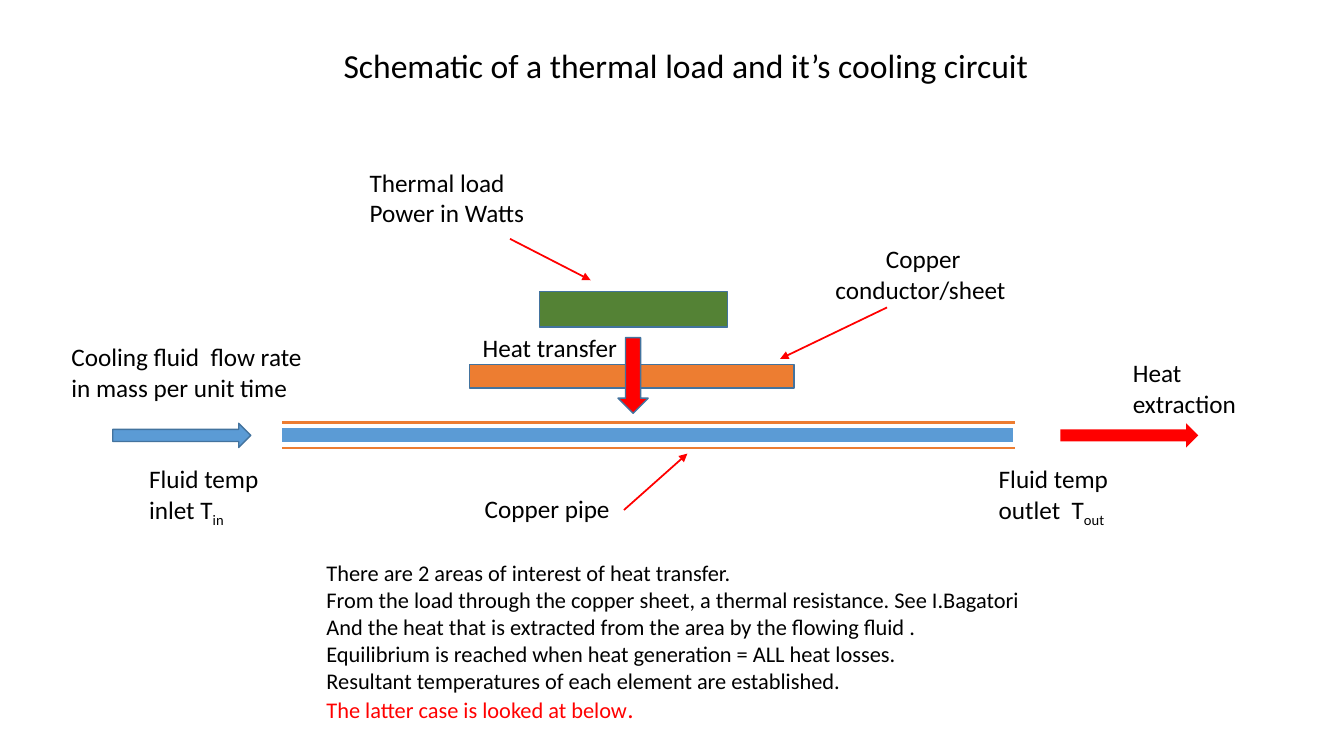
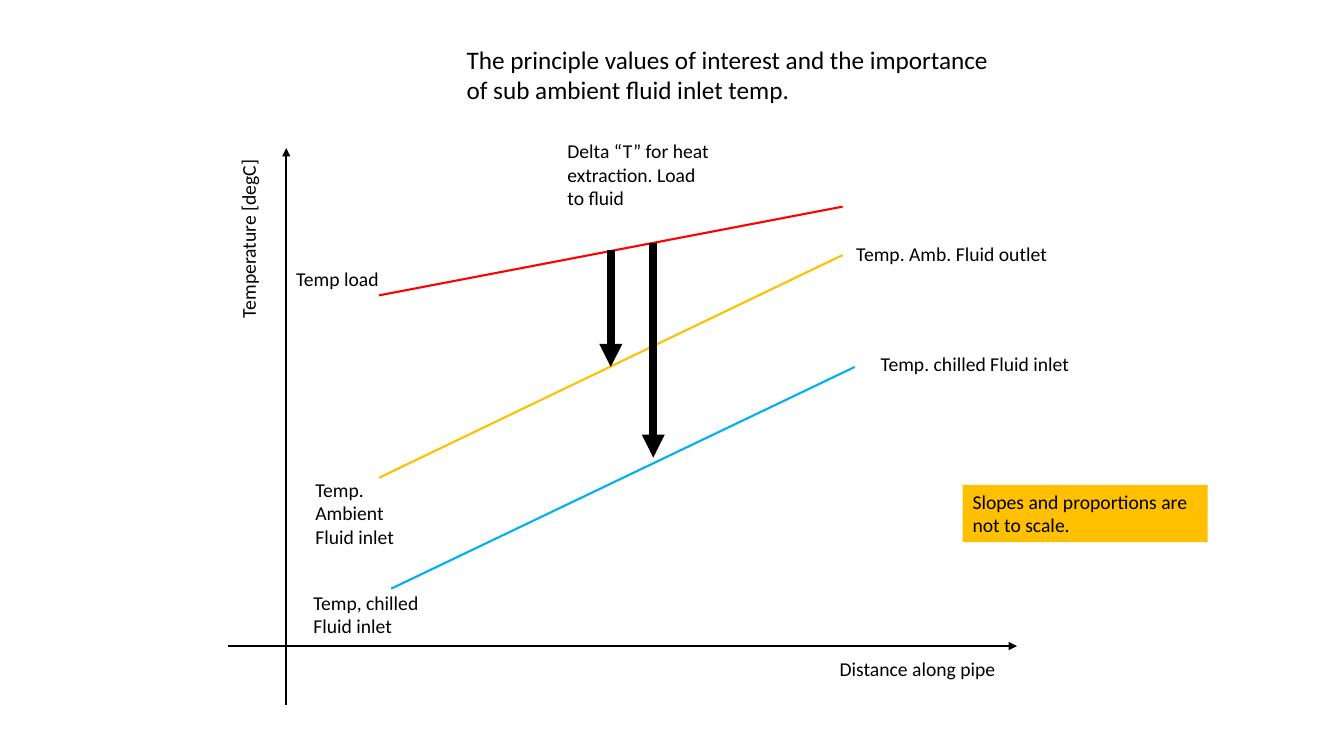
from lxml.etree import SubElement
from pptx import Presentation
from pptx.dml.color import RGBColor
from pptx.enum.shapes import MSO_CONNECTOR, MSO_SHAPE
from pptx.oxml.ns import qn
from pptx.util import Pt

FONT = "Calibri"
BLACK = RGBColor(0x00, 0x00, 0x00)
RED = RGBColor(0xFF, 0x00, 0x00)
AMBER = RGBColor(0xFF, 0xC0, 0x00)
SKY = RGBColor(0x00, 0xB0, 0xF0)
BLUE = RGBColor(0x5B, 0x9B, 0xD5)
COPPER = RGBColor(0xED, 0x7D, 0x31)
GREEN = RGBColor(0x54, 0x82, 0x35)
OUTLINE = RGBColor(0x43, 0x73, 0x9E)


def add_label(page, text, left, top, width, height, size):
    box = page.shapes.add_textbox(Pt(left), Pt(top), Pt(width), Pt(height))
    box.text_frame.word_wrap = True
    box.text_frame.text = text
    for para in box.text_frame.paragraphs:
        para.font.name = FONT
        for span in para.runs:
            span.font.name = FONT
            span.font.size = Pt(size)
            span.font.color.rgb = BLACK
    return box


def add_line(page, start, end, color, width, arrow=False):
    line = page.shapes.add_connector(
        MSO_CONNECTOR.STRAIGHT, *[Pt(value) for value in start + end])
    line.line.color.rgb = color
    line.line.width = Pt(width)
    if arrow:
        SubElement(line.line._get_or_add_ln(), qn("a:tailEnd"), type="triangle")
    SubElement(line._element.spPr, qn("a:effectLst"))


deck = Presentation()
deck.slide_width, deck.slide_height = Pt(960), Pt(540)
blank = deck.slide_layouts[6]

# Slide 1: cooling circuit schematic
page = deck.slides.add_slide(blank)
add_label(page, "Schematic of a thermal load and it’s cooling circuit",
          238.3, 28.8, 530, 36, 24)

# Pipe: fluid between two copper walls
PIPE_LEFT, PIPE_MIDDLE, WALL_GAP = 201.6, 311, 9
add_line(page, (PIPE_LEFT, PIPE_MIDDLE), (723.6, PIPE_MIDDLE), BLUE, 10)
for wall in (PIPE_MIDDLE - WALL_GAP, PIPE_MIDDLE + WALL_GAP):
    add_line(page, (PIPE_LEFT, wall), (725, wall), COPPER, 2)

# Copper sheet, load and block arrows
for kind, left, top, width, height, fill, outlined in (
    (MSO_SHAPE.RECTANGLE, 335.5, 260.6, 231.8, 16.6, COPPER, True),
    (MSO_SHAPE.RECTANGLE, 385.2, 208.4, 134.6, 25.2, GREEN, True),
    (MSO_SHAPE.DOWN_ARROW, 441.4, 241.2, 21.6, 54, RED, True),
    (MSO_SHAPE.RIGHT_ARROW, 80.6, 302.4, 98.6, 17.3, BLUE, True),
    (MSO_SHAPE.RIGHT_ARROW, 757.4, 302.4, 98.6, 17.3, RED, False),
):
    shape = page.shapes.add_shape(kind, Pt(left), Pt(top), Pt(width), Pt(height))
    shape.shadow.inherit = False
    shape.fill.solid()
    shape.fill.fore_color.rgb = fill
    if outlined:
        shape.line.color.rgb = OUTLINE
        shape.line.width = Pt(1)
    else:
        shape.line.fill.background()

# Part labels
for text, left, top, width, height in (
    ("Thermal load\nPower in Watts", 257, 115.9, 144.7, 51),
    ("Cooling fluid  flow rate\nin mass per unit time", 43.9, 240.5, 193.7, 51),
    ("Copper pipe", 339.1, 348.5, 144.7, 29),
    ("Heat transfer", 337.7, 234, 114.5, 29),
    ("Heat extraction", 802.1, 252, 106.6, 51),
):
    add_label(page, text, left, top, width, height, 18)

sheet_label = add_label(page, "Copper conductor/sheet", 589.7, 170.6, 144.7, 51, 18)
sheet_label.text_frame.paragraphs[0]._p.get_or_add_pPr().set("indent", str(Pt(36)))

# Fluid temperatures with subscripts
for text, subscript, left in (("Fluid temp inlet T", "in", 99.4),
                              ("Fluid temp outlet  T", "out", 706.3)):
    box = add_label(page, text, left, 327.6, 100.8, 51, 18)
    span = box.text_frame.paragraphs[0].add_run()
    span.text = subscript
    span.font.name = FONT
    span.font.size = Pt(18)
    span.font.color.rgb = BLACK
    span.font._element.set("baseline", "-25000")

# Pointers from labels to parts
for start, end in (((364.3, 170.6), (421.9, 200.2)),
                   ((445.7, 364.3), (491, 324)),
                   ((633.6, 219.6), (557.3, 256.3))):
    add_line(page, start, end, RED, 1.25, arrow=True)

# Explanation
notes = add_label(page, "\n".join((
    "There are 2 areas of interest of heat transfer.",
    "From the load through the copper sheet, a thermal resistance. See I.Bagatori",
    "And the heat that is extracted from the area by the flowing fluid .",
    "Equilibrium is reached when heat generation = ALL heat losses.",
    "Resultant temperatures of each element are established.",
    "The latter case is looked at below",
)), 226.1, 396, 555.8, 126, 16)
para = notes.text_frame.paragraphs[-1]
period = para.add_run()
period.text = "."
period.font.name = FONT
period.font.size = Pt(18)
for span in para.runs:
    span.font.color.rgb = RED

# Slide 2: temperatures along the pipe
page = deck.slides.add_slide(blank)
add_label(page, "The principle values of interest and the importance "
          "of sub ambient fluid inlet temp.", 326.2, 28.1, 387.4, 51, 18)

# Axes
add_line(page, (204.5, 503.3), (204.5, 105.8), BLACK, 1.5, arrow=True)
add_line(page, (162.7, 461.5), (726.5, 461.5), BLACK, 1.5, arrow=True)

# Temperature lines
RUN = 331.2
for left, start, end, color in ((270.7, 341.3, 182.2, AMBER),
                                (279.4, 420.5, 262.1, SKY),
                                (270.7, 211, 147.6, RED)):
    add_line(page, (left, start), (left + RUN, end), color, 1.5)

# Temperature differences
for across, top, bottom in ((466.6, 173.5, 326.9), (436.3, 178.6, 262.1)):
    add_line(page, (across, top), (across, bottom), BLACK, 5.5, arrow=True)

# Line and axis labels
for text, left, top, width, height in (
    ("Temp. Ambient Fluid inlet", 218.2, 337.7, 72.7, 58.3),
    ("Temp load", 204.5, 187.2, 84.2, 24.5),
    ("Temp, chilled Fluid inlet", 216.7, 418.3, 93.6, 41),
    ("Distance along pipe", 592.6, 465.8, 145.4, 24.5),
    ("Delta “T” for heat extraction. Load to fluid", 398.2, 95.8, 116, 58.3),
    ("Temp. chilled Fluid inlet", 622, 247.7, 193.7, 24.5),
    ("Temp. Amb. Fluid outlet", 604.5, 169.2, 173.5, 24.5),
):
    add_label(page, text, left, top, width, height, 14)

axis_label = add_label(page, "Temperature [degC]", 103, 147.6, 149, 24.5, 14)
axis_label.rotation = 270

# Scale remark
remark = add_label(page, "Slopes and proportions are not to scale.",
                   687.6, 346.3, 175, 41, 14)
remark.fill.solid()
remark.fill.fore_color.rgb = AMBER

deck.save("out.pptx")
